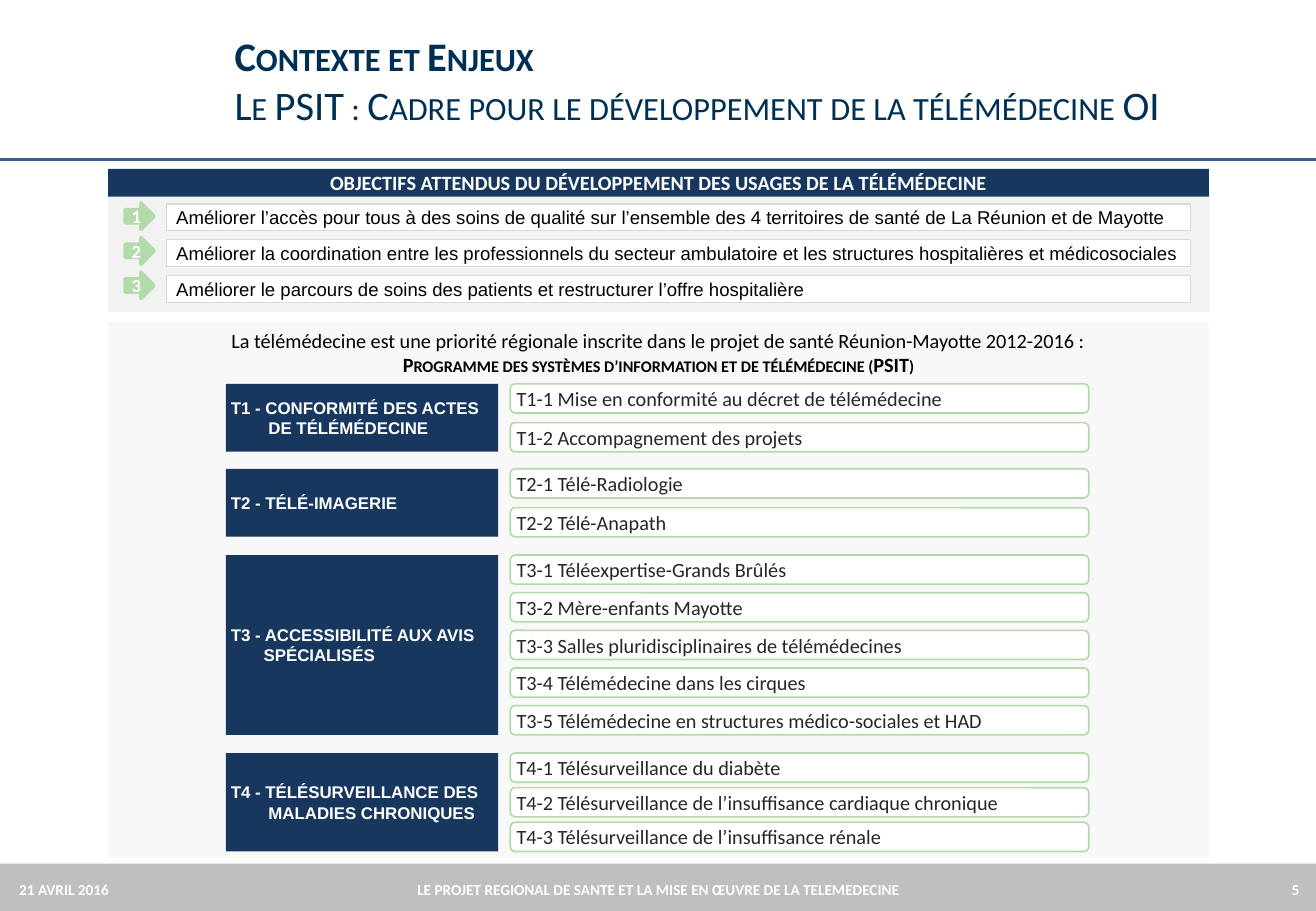
from lxml import etree
from pptx import Presentation
from pptx.dml.color import RGBColor
from pptx.enum.shapes import MSO_CONNECTOR, MSO_SHAPE
from pptx.enum.text import MSO_ANCHOR, MSO_AUTO_SIZE, PP_ALIGN
from pptx.oxml.ns import qn
from pptx.util import Inches, Pt

RECTANGLE = MSO_SHAPE.RECTANGLE
ROUNDED = MSO_SHAPE.ROUNDED_RECTANGLE
ARROW = MSO_SHAPE.RIGHT_ARROW
LEFT, CENTER, RIGHT = PP_ALIGN.LEFT, PP_ALIGN.CENTER, PP_ALIGN.RIGHT
TOP, MIDDLE = MSO_ANCHOR.TOP, MSO_ANCHOR.MIDDLE

COLORS = {
    "navy": "17375E", "title": "002F54", "rule": "376092", "footer": "BFBFBF",
    "objectives": "F2F2F2", "program": "F8F8F8", "border": "D9D9D9",
    "green": "B3DAAA", "white": "FFFFFF", "black": "000000", "text": "262626",
}

presentation = Presentation()
presentation.slide_width = Inches(10.83)
presentation.slide_height = Inches(7.5)
slide = presentation.slides.add_slide(presentation.slide_layouts[5])


def add_box(kind, left, top, width, height, fill, line=None, line_width=1):
    shape = slide.shapes.add_shape(kind, Inches(left), Inches(top), Inches(width), Inches(height))
    shape.shadow.inherit = False
    shape.fill.solid()
    shape.fill.fore_color.rgb = RGBColor.from_string(COLORS[fill])
    if line:
        shape.line.color.rgb = RGBColor.from_string(COLORS[line])
        shape.line.width = Pt(line_width)
    else:
        shape.line.fill.background()
    return shape


def write(shape, lines, size, color, name="Calibri", bold=False, align=LEFT,
          anchor=MIDDLE, left_inset=0.1, right_inset=0.1):
    frame = shape.text_frame
    frame.word_wrap = True
    frame.auto_size = MSO_AUTO_SIZE.NONE
    frame.vertical_anchor = anchor
    frame.margin_left, frame.margin_right = Inches(left_inset), Inches(right_inset)
    frame.text = "\n".join(lines)
    for paragraph in frame.paragraphs:
        paragraph.alignment = align
        paragraph.font.size = Pt(size)
        paragraph.font.name = name
        paragraph.font.bold = bold
        paragraph.font.color.rgb = RGBColor.from_string(COLORS[color])
    return frame.paragraphs


add_box(RECTANGLE, 0, 7.11, 10.83, 0.39, "footer")
rule = slide.shapes.add_connector(
    MSO_CONNECTOR.STRAIGHT, 0, Inches(1.31), Inches(10.83), Inches(1.31))
rule.line.color.rgb = RGBColor.from_string(COLORS["rule"])
rule.line.width = Pt(1.75)
etree.SubElement(rule._element.spPr, qn("a:effectLst"))

title = slide.shapes.title
title.left, title.top = Inches(1.83), Inches(0.11)
title.width, title.height = Inches(8.46), Inches(1.09)
title_paragraph = write(title, ["Contexte et Enjeux"], 24, "title")[0]
title_paragraph.runs[0].font.bold = True
title_paragraph.add_line_break()
title_paragraph.add_run().text = "Le PSIT : Cadre pour le développement de la télémédecine OI"

add_box(RECTANGLE, 0.89, 1.62, 9.06, 0.95, "objectives")
heading = add_box(RECTANGLE, 0.89, 1.39, 9.06, 0.23, "navy")
write(heading, ["OBJECTIFS ATTENDUS DU DÉVELOPPEMENT DES USAGES DE LA TÉLÉMÉDECINE"],
      12, "white", bold=True, align=CENTER)

objectives = [
    "Améliorer l’accès pour tous à des soins de qualité sur l’ensemble des 4 territoires de santé de La Réunion et de Mayotte",
    "Améliorer la coordination entre les professionnels du secteur ambulatoire et les structures hospitalières et médicosociales",
    "Améliorer le parcours de soins des patients et restructurer l’offre hospitalière",
]
for index, objective in enumerate(objectives):
    box = add_box(RECTANGLE, 1.37, 1.68 + index * 0.295, 8.43, 0.22, "white", "border", 0.75)
    write(box, [objective], 11, "black", name="Arial", left_inset=0.08, right_inset=0.04)
    arrow = add_box(ARROW, 1.03, 1.67 + index * 0.285, 0.24, 0.22, "green", "green", 2)
    write(arrow, [str(index + 1)], 11, "white", bold=True, align=CENTER,
          left_inset=0, right_inset=0)

program = add_box(RECTANGLE, 0.89, 2.65, 9.06, 4.41, "program")
program_paragraphs = write(program, [
    "La télémédecine est une priorité régionale inscrite dans le projet de santé Réunion-Mayotte 2012-2016 :",
    "Programme des systèmes d’information et de télémédecine (PSIT)",
], 12, "black", align=CENTER, anchor=TOP)
program_paragraphs[1].font.bold = True

for run in [*title_paragraph.runs, *program_paragraphs[1].runs]:
    run._r.get_or_add_rPr().set("cap", "small")

themes = [
    (3.16, 0.56, 0.31, ["T1 - CONFORMITÉ DES ACTES", "DE TÉLÉMÉDECINE"], [
        "T1-1 Mise en conformité au décret de télémédecine",
        "T1-2 Accompagnement des projets"]),
    (3.86, 0.56, 0, ["T2 - TÉLÉ-IMAGERIE"], [
        "T2-1 Télé-Radiologie",
        "T2-2 Télé-Anapath"]),
    (4.57, 1.48, 0.27, ["T3 - ACCESSIBILITÉ AUX AVIS", "SPÉCIALISÉS"], [
        "T3-1 Téléexpertise-Grands Brûlés",
        "T3-2 Mère-enfants Mayotte",
        "T3-3 Salles pluridisciplinaires de télémédecines",
        "T3-4 Télémédecine dans les cirques",
        "T3-5 Télémédecine en structures médico-sociales et HAD"]),
    (6.2, 0.81, 0.31, ["T4 - TÉLÉSURVEILLANCE DES", "MALADIES CHRONIQUES"], [
        "T4-1 Télésurveillance du diabète",
        "T4-2 Télésurveillance de l’insuffisance cardiaque chronique",
        "T4-3 Télésurveillance de l’insuffisance rénale"]),
]
PROJECT_HEIGHT = 0.24
for top, height, indent, theme, projects in themes:
    theme_box = add_box(RECTANGLE, 1.86, top, 2.24, height, "navy")
    theme_paragraphs = write(theme_box, theme, 10, "white", name="Arial", bold=True,
                             left_inset=0.04, right_inset=0.04)
    for paragraph in theme_paragraphs[1:]:
        paragraph._p.get_or_add_pPr().set("marL", str(Inches(indent)))
    pitch = (height - PROJECT_HEIGHT) / (len(projects) - 1)
    for index, project in enumerate(projects):
        project_box = add_box(ROUNDED, 4.2, top + index * pitch, 4.76, PROJECT_HEIGHT,
                              "white", "green")
        write(project_box, [project], 12, "text", left_inset=0.04, right_inset=0.04)

footers = [
    (0.06, 1.88, LEFT, "21 AVRIL 2016"),
    (2.45, 5.93, CENTER, "LE PROJET REGIONAL DE SANTE ET LA MISE EN ŒUVRE DE LA TELEMEDECINE"),
    (10.24, 0.55, RIGHT, "5"),
]
for left, width, align, text in footers:
    footer = slide.shapes.add_textbox(Inches(left), Inches(7.14), Inches(width), Inches(0.36))
    write(footer, [text], 9, "white", bold=True, align=align)

presentation.save("out.pptx")
